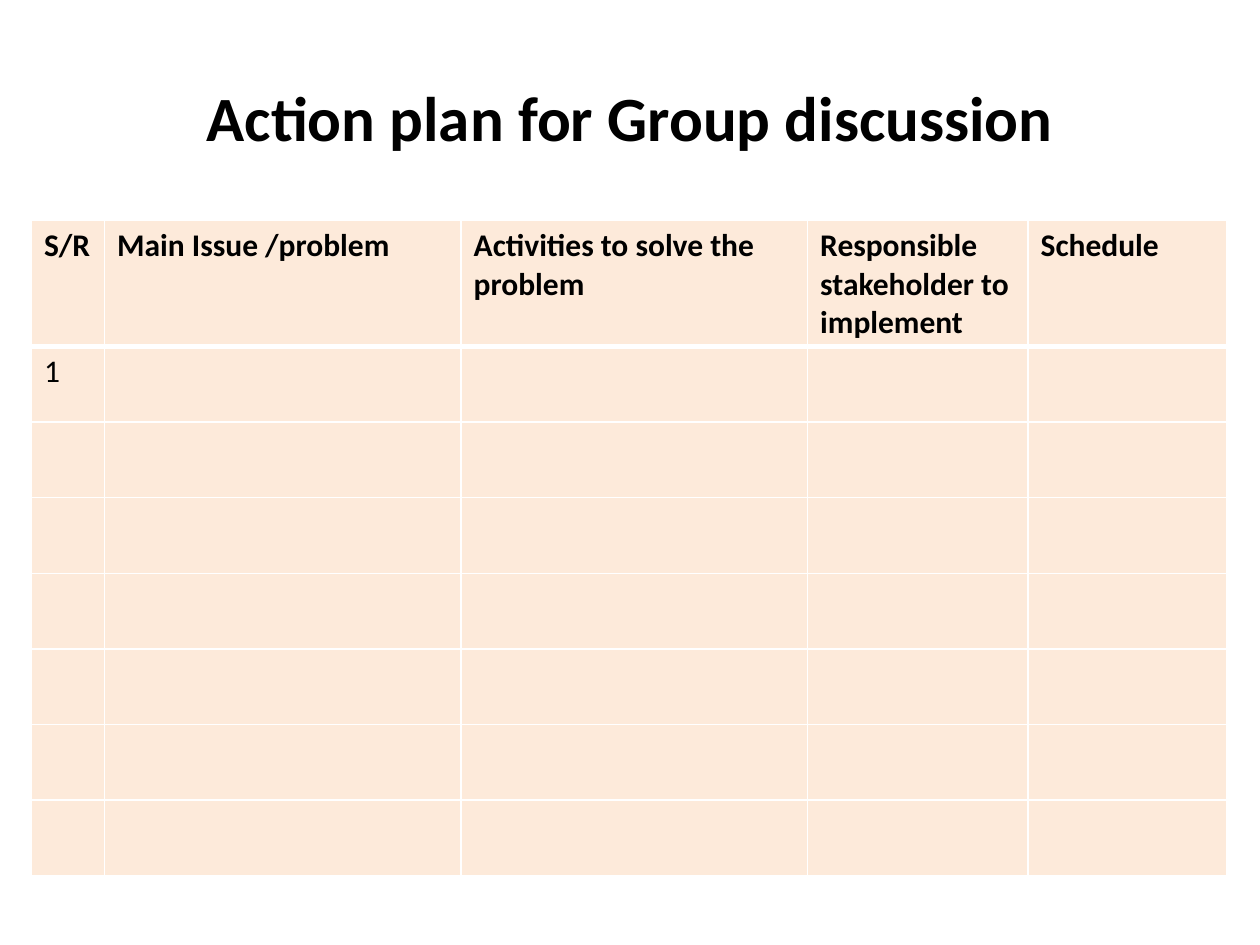
from dataclasses import dataclass

from lxml.etree import SubElement
from pptx import Presentation
from pptx.dml.color import RGBColor
from pptx.enum.text import MSO_ANCHOR, PP_ALIGN
from pptx.oxml.ns import qn
from pptx.slide import Slide
from pptx.table import Table, _Cell as Cell
from pptx.text.text import TextFrame
from pptx.util import Inches, Pt

BLACK = RGBColor(0x00, 0x00, 0x00)
WHITE = RGBColor(0xFF, 0xFF, 0xFF)
PEACH = RGBColor(0xFD, 0xEA, 0xDA)
FONT = "Calibri"
HEADER_HEIGHT = 0.83
ROW_HEIGHT = 0.6
ROW_COUNT = 7
THIN, THICK = 1, 3


@dataclass(frozen=True)
class Column:
    heading: str
    width: float
    first_entry: str = ""


COLUMNS = [
    Column("S/R", 0.58, "1"),
    Column("Main Issue /problem", 2.83),
    Column("Activities to solve the problem", 2.75),
    Column("Responsible stakeholder to implement", 1.75),
    Column("Schedule", 1.58),
]


def write_text(frame: TextFrame, text: str, size: int, bold: bool) -> None:
    frame.text = text
    for span in frame.paragraphs[0].runs:
        span.font.name = FONT
        span.font.size = Pt(size)
        span.font.bold = bold
        span.font.color.rgb = BLACK


def set_borders(cell: Cell, top: int, bottom: int) -> None:
    properties = cell._tc.get_or_add_tcPr()
    widths = {"a:lnL": THIN, "a:lnR": THIN, "a:lnT": top, "a:lnB": bottom}
    for tag, width in widths.items():
        line = SubElement(properties, qn(tag), w=str(Pt(width)))
        fill = SubElement(line, qn("a:solidFill"))
        SubElement(fill, qn("a:srgbClr"), val=str(WHITE))


def style_cell(cell: Cell, text: str, row: int) -> None:
    set_borders(cell, THICK if row == 1 else THIN, THICK if row == 0 else THIN)
    cell.fill.solid()
    cell.fill.fore_color.rgb = PEACH
    write_text(cell.text_frame, text, 18, row == 0)


def add_title(page: Slide, text: str) -> None:
    box = page.shapes.add_textbox(Inches(0.5), Inches(0.3), Inches(9), Inches(1.25))
    frame = box.text_frame
    frame.word_wrap = True
    frame.vertical_anchor = MSO_ANCHOR.MIDDLE
    write_text(frame, text, 36, True)
    frame.paragraphs[0].alignment = PP_ALIGN.CENTER


def add_plan_table(page: Slide, columns: list[Column]) -> None:
    width = sum(column.width for column in columns)
    height = HEADER_HEIGHT + ROW_COUNT * ROW_HEIGHT
    table: Table = page.shapes.add_table(
        ROW_COUNT + 1, len(columns),
        Inches(0.25), Inches(1.75), Inches(width), Inches(height),
    ).table
    table.horz_banding = False
    for index, row in enumerate(table.rows):
        row.height = Inches(ROW_HEIGHT if index else HEADER_HEIGHT)
    for index, column in enumerate(columns):
        table.columns[index].width = Inches(column.width)
        entries = [column.heading, column.first_entry] + [""] * (ROW_COUNT - 1)
        for row, text in enumerate(entries):
            style_cell(table.cell(row, index), text, row)


def main() -> None:
    deck = Presentation()
    deck.slide_width = Inches(10)
    deck.slide_height = Inches(7.5)
    page = deck.slides.add_slide(deck.slide_layouts[6])
    add_title(page, "Action plan for Group discussion")
    add_plan_table(page, COLUMNS)
    deck.save("out.pptx")


if __name__ == "__main__":
    main()
